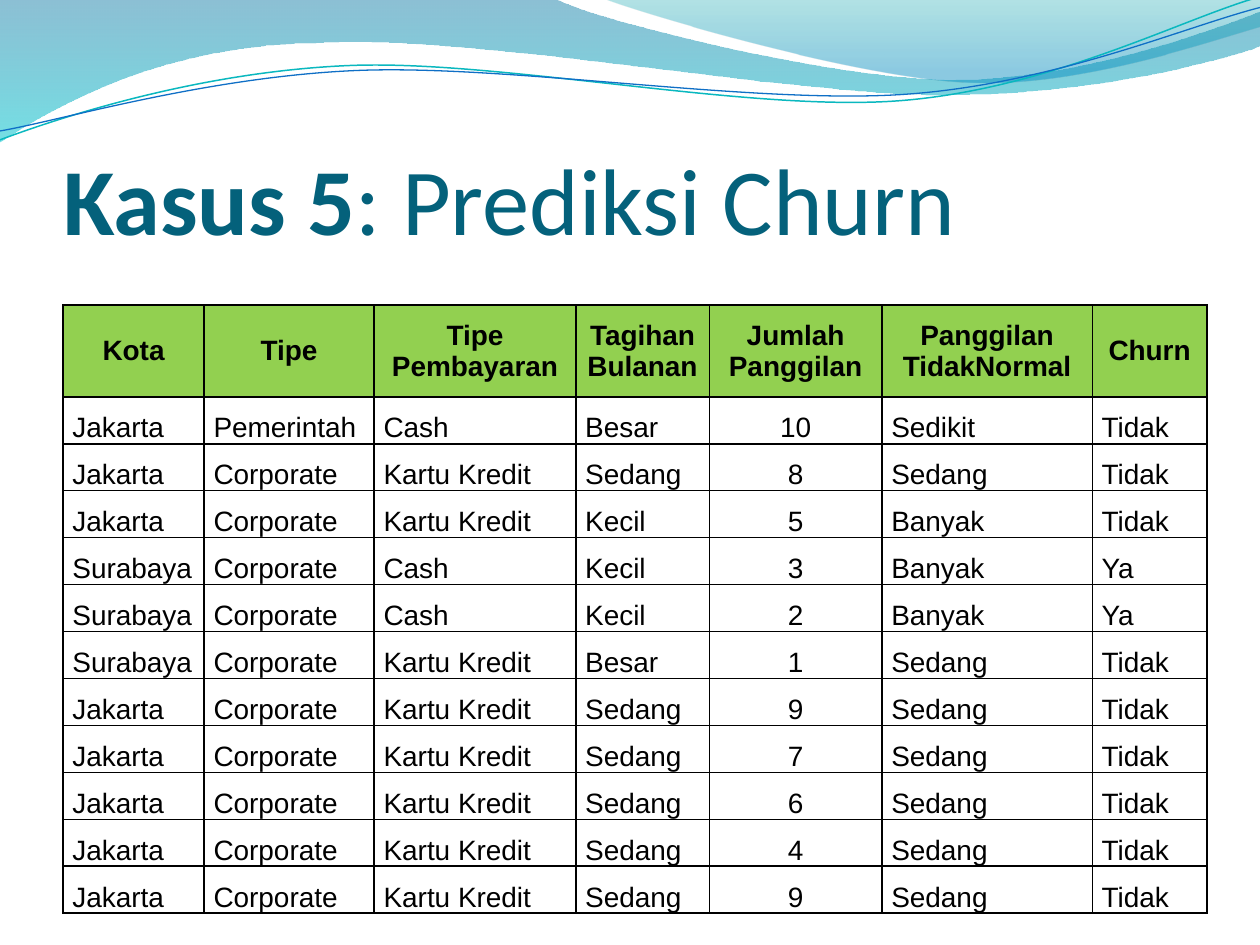
from dataclasses import dataclass
from math import cos, radians, sin

from lxml.etree import SubElement
from pptx import Presentation
from pptx.dml.color import RGBColor
from pptx.enum.text import MSO_ANCHOR, MSO_AUTO_SIZE, PP_ALIGN
from pptx.oxml.ns import qn
from pptx.util import Inches, Pt

Point = tuple[float, float]
Segment = tuple[Point, ...]


@dataclass(frozen=True)
class Theme:
    title_font: str = "Calibri"
    table_font: str = "Arial"
    title_size: int = 54
    table_size: int = 16
    title_color: str = "04617B"
    ink: str = "000000"
    header_fill: str = "92D050"
    border_width: float = 1


@dataclass(frozen=True)
class Stop:
    position: float
    color: str
    opacity: int


@dataclass(frozen=True)
class Wave:
    start: Point
    segments: list[Segment]
    stops: tuple[Stop, ...] = ()
    line_color: str = ""
    line_width: float = 0
    rotation: float = 0
    center: Point = (0, 0)


THEME = Theme()
SLIDE_WIDTH, SLIDE_HEIGHT = 10, 7.5
MARGIN = SLIDE_WIDTH * 0.05
CONTENT_WIDTH = 9.08
TITLE_TOP, TITLE_HEIGHT = 0.77, 1.25
TABLE_TOP, TABLE_HEIGHT, HEADER_HEIGHT = 2.42, 4.83, 0.73
COLUMN_WIDTHS = [1.12, 1.35, 1.6, 1.06, 1.37, 1.67, 0.91]
COUNT_COLUMN = 4
LINE_ROTATION = 357.3

WAVES = [
    Wave((0, -0.01), [
        ((4.4, -0.01),),
        ((4.76, 0.17), (6.64, 0.63), (7.58, 0.63)),
        ((8.53, 0.63), (9.58, 0.26), (10, 0.09)),
        ((10.01, 0.36),),
        ((9.83, 0.44), (8.7, 0.76), (7.46, 0.75)),
        ((6.22, 0.75), (3.82, 0.28), (2.57, 0.34)),
        ((1.29, 0.35), (0.46, 0.83), (-0.01, 1.13)),
        ((0, -0.01),),
    ], stops=(Stop(0, "0074A1", 45), Stop(1, "00C6CF", 55))),
    Wave((4.79, -0.01), [
        ((5.09, 0.11), (6.82, 0.62), (7.69, 0.65)),
        ((8.56, 0.69), (9.61, 0.32), (10, 0.21)),
        ((10, 0),),
        ((4.79, -0.01),),
    ], stops=(Stop(0, "00A1A9", 30), Stop(0.8, "008BBF", 45))),
    Wave((0, 1.11), [
        ((0.48, 0.93), (1.58, 0.57), (2.77, 0.52)),
        ((3.95, 0.47), (5.93, 0.89), (7.13, 0.8)),
        ((8.33, 0.71), (9.38, 0.15), (9.98, -0.02)),
    ], line_color="0AB8BF", line_width=0.85, rotation=LINE_ROTATION, center=(4.99, 0.58)),
    Wave((0, 1.04), [
        ((0.47, 0.96), (1.64, 0.61), (2.83, 0.56)),
        ((4.03, 0.51), (5.97, 0.83), (7.17, 0.75)),
        ((8.36, 0.67), (9.41, 0.21), (10, 0.06)),
    ], line_color="0F6FC6", line_width=0.75, rotation=LINE_ROTATION, center=(5, 0.59)),
]

HEADERS = ["Kota", "Tipe", "Tipe\nPembayaran", "Tagihan\nBulanan",
           "Jumlah\nPanggilan", "Panggilan\nTidakNormal", "Churn"]
CUSTOMERS = [
    ["Jakarta", "Pemerintah", "Cash", "Besar", "10", "Sedikit", "Tidak"],
    ["Jakarta", "Corporate", "Kartu Kredit", "Sedang", "8", "Sedang", "Tidak"],
    ["Jakarta", "Corporate", "Kartu Kredit", "Kecil", "5", "Banyak", "Tidak"],
    ["Surabaya", "Corporate", "Cash", "Kecil", "3", "Banyak", "Ya"],
    ["Surabaya", "Corporate", "Cash", "Kecil", "2", "Banyak", "Ya"],
    ["Surabaya", "Corporate", "Kartu Kredit", "Besar", "1", "Sedang", "Tidak"],
    *(["Jakarta", "Corporate", "Kartu Kredit", "Sedang", calls, "Sedang", "Tidak"]
      for calls in ("9", "7", "6", "4", "9")),
]


def level_point(point: Point, wave: Wave) -> tuple[int, int]:
    angle = radians(-wave.rotation)
    across, down = point[0] - wave.center[0], point[1] - wave.center[1]
    return (Inches(wave.center[0] + across * cos(angle) - down * sin(angle)),
            Inches(wave.center[1] + across * sin(angle) + down * cos(angle)))


def bend_segments(shape, segments: list[Segment]) -> None:
    edges = iter(list(shape.element.iter(qn("a:lnTo"))))
    for segment in segments:
        first, *others = [next(edges) for _ in segment]
        if others:
            first.tag = qn("a:cubicBezTo")
            for edge in others:
                first.append(edge[0])
                edge.getparent().remove(edge)


def fill_gradient(shape, stops: tuple[Stop, ...]) -> None:
    shape.fill.gradient()
    shape.fill.gradient_angle = 270
    for gradient_stop, stop in zip(shape.fill.gradient_stops, stops):
        gradient_stop.position = stop.position
        gradient_stop.color.rgb = RGBColor.from_string(stop.color)
    for color, stop in zip(shape.element.iter(qn("a:srgbClr")), stops):
        SubElement(color, qn("a:alpha"), val=str(stop.opacity * 1000))


def draw_wave(page, wave: Wave):
    points = [level_point(point, wave) for segment in wave.segments for point in segment]
    builder = page.shapes.build_freeform(*level_point(wave.start, wave))
    builder.add_line_segments(points, close=bool(wave.stops))
    shape = builder.convert_to_shape()
    bend_segments(shape, wave.segments)
    shape.rotation = wave.rotation
    shape.shadow.inherit = False
    if wave.stops:
        fill_gradient(shape, wave.stops)
        shape.line.fill.background()
    else:
        shape.fill.background()
        shape.line.color.rgb = RGBColor.from_string(wave.line_color)
        shape.line.width = Pt(wave.line_width)
    return shape


def write_title(title) -> None:
    title.left, title.top = Inches(MARGIN), Inches(TITLE_TOP)
    title.width, title.height = Inches(CONTENT_WIDTH), Inches(TITLE_HEIGHT)
    frame = title.text_frame
    frame.auto_size = MSO_AUTO_SIZE.NONE
    frame.vertical_anchor = MSO_ANCHOR.BOTTOM
    frame.margin_left = frame.margin_right = frame.margin_bottom = 0
    frame.margin_top = Inches(0.05)
    para = frame.paragraphs[0]
    para.alignment = PP_ALIGN.LEFT
    para.font.name = THEME.title_font
    para.font.size = Pt(THEME.title_size)
    para.font.color.rgb = RGBColor.from_string(THEME.title_color)
    for text, bold in (("Kasus 5", True), (": Prediksi Churn", False)):
        span = para.add_run()
        span.text = text
        span.font.bold = bold


def draw_borders(cell) -> None:
    properties = cell._tc.get_or_add_tcPr()
    for side in ("a:lnL", "a:lnR", "a:lnT", "a:lnB"):
        line = SubElement(properties, qn(side), w=str(Pt(THEME.border_width)))
        SubElement(SubElement(line, qn("a:solidFill")), qn("a:srgbClr"), val=THEME.ink)


def write_cell(cell, text: str, header: bool, centered: bool) -> None:
    draw_borders(cell)
    if header:
        cell.fill.solid()
        cell.fill.fore_color.rgb = RGBColor.from_string(THEME.header_fill)
    else:
        cell.fill.background()
    cell.margin_left = cell.margin_right = Pt(5.4)
    cell.margin_top = cell.margin_bottom = 0
    cell.vertical_anchor = MSO_ANCHOR.MIDDLE if header else MSO_ANCHOR.BOTTOM
    cell.text = text
    for para in cell.text_frame.paragraphs:
        para.alignment = PP_ALIGN.CENTER if centered else PP_ALIGN.LEFT
        para.font.name = THEME.table_font
        para.font.size = Pt(THEME.table_size)
        para.font.bold = header
        para.font.color.rgb = RGBColor.from_string(THEME.ink)


def draw_table(page) -> None:
    rows = [HEADERS, *CUSTOMERS]
    table = page.shapes.add_table(
        len(rows), len(HEADERS), Inches(MARGIN), Inches(TABLE_TOP),
        Inches(CONTENT_WIDTH), Inches(TABLE_HEIGHT)).table
    table.first_row = table.horz_banding = False
    for column, width in zip(table.columns, COLUMN_WIDTHS):
        column.width = Inches(width)
    body_height = (TABLE_HEIGHT - HEADER_HEIGHT) / len(CUSTOMERS)
    for row, texts in enumerate(rows):
        header = row == 0
        table.rows[row].height = Inches(HEADER_HEIGHT if header else body_height)
        for column, text in enumerate(texts):
            write_cell(table.cell(row, column), text, header, header or column == COUNT_COLUMN)


deck = Presentation()
deck.slide_width, deck.slide_height = Inches(SLIDE_WIDTH), Inches(SLIDE_HEIGHT)
page = deck.slides.add_slide(deck.slide_layouts[5])
title = page.shapes.title
for wave in WAVES:
    title.element.addprevious(draw_wave(page, wave).element)
write_title(title)
draw_table(page)
deck.save("out.pptx")
